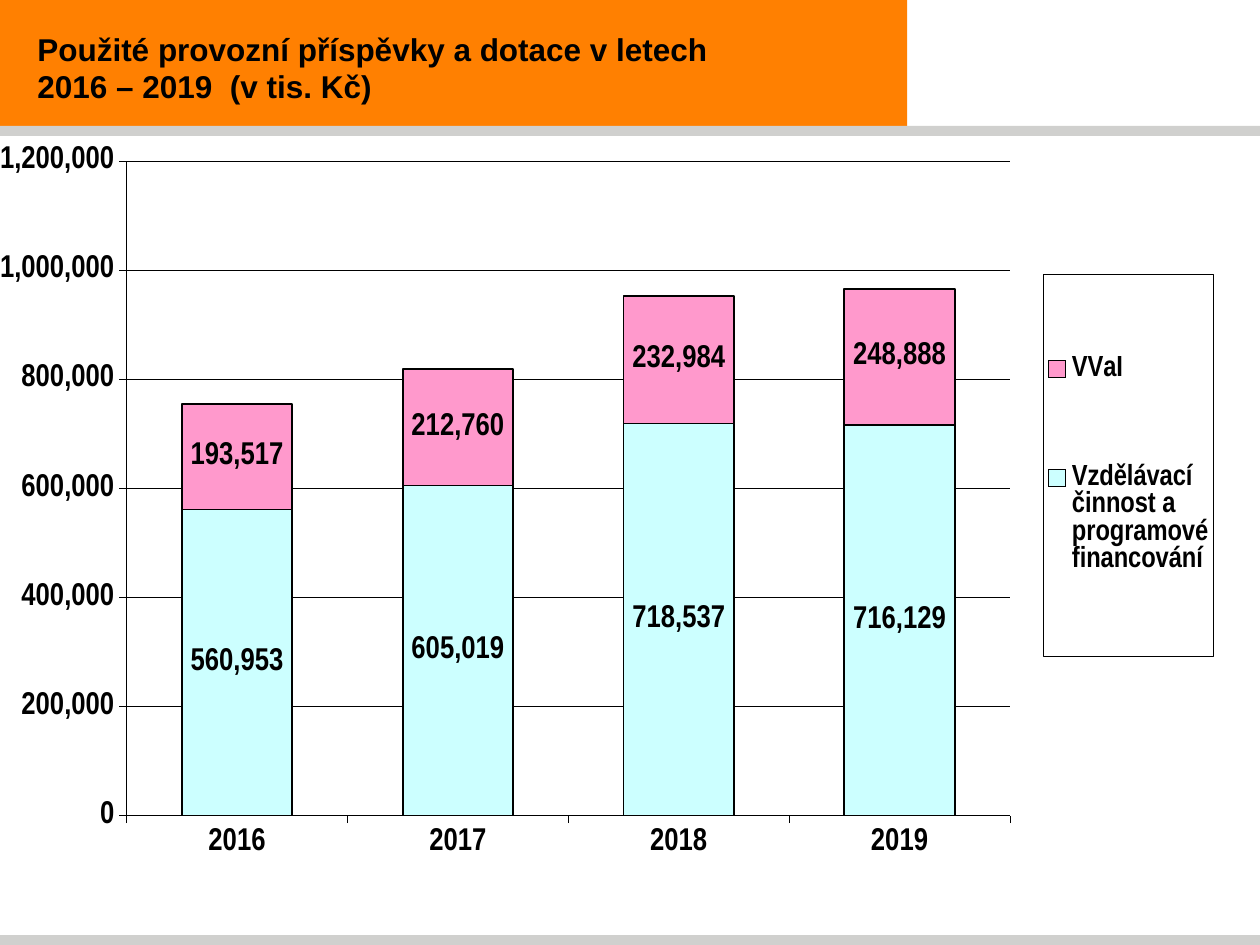
from lxml.etree import SubElement
from pptx import Presentation
from pptx.chart.data import CategoryChartData
from pptx.dml.color import RGBColor
from pptx.enum.chart import (XL_CHART_TYPE, XL_LEGEND_POSITION,
                             XL_TICK_LABEL_POSITION, XL_TICK_MARK)
from pptx.enum.shapes import MSO_SHAPE
from pptx.enum.text import MSO_ANCHOR, MSO_AUTO_SIZE, PP_ALIGN
from pptx.oxml import parse_xml
from pptx.oxml.ns import nsdecls, qn
from pptx.util import Cm, Pt

HUES = {"orange": "FF8001", "grey": "D0D0CE", "black": "000000",
        "aqua": "CCFFFF", "pink": "FF99CC"}
WIDE, HIGH = 25.4, 19.05
BAND, RULE = 18.29, 0.2
TITLE = "Použité provozní příspěvky a dotace v letech \v2016 – 2019  (v tis. Kč)"
YEARS = ["2016", "2017", "2018", "2019"]
SERIES = [
    ("Vzdělávací činnost a programové financování", "aqua",
     (560953, 605019, 718537, 716129)),
    ("VVaI", "pink", (193517, 212760, 232984, 248888)),
]


def hue(name):
    return RGBColor.from_string(HUES[name])


def style(font, face, size=18):
    for key, value in {"name": face, "size": Pt(size), "bold": True}.items():
        setattr(font, key, value)
    font.color.rgb = hue("black")


def stroke(line, width):
    line.color.rgb = hue("black")
    line.width = Pt(width)


def add_bar(slide, top, width, height, color):
    bar = slide.shapes.add_shape(MSO_SHAPE.RECTANGLE, 0, Cm(top),
                                 Cm(width), Cm(height))
    bar.shadow.inherit = False
    bar.fill.solid()
    bar.fill.fore_color.rgb = hue(color)
    bar.line.fill.background()


def set_title(slide):
    title = slide.shapes.title
    spot = {"left": 0, "top": Cm(0.18), "width": Cm(BAND), "height": Cm(2.36)}
    for key, value in spot.items():
        setattr(title, key, value)
    frame = title.text_frame
    look = {"text": TITLE, "word_wrap": True, "auto_size": MSO_AUTO_SIZE.NONE,
            "vertical_anchor": MSO_ANCHOR.MIDDLE}
    for key, value in look.items():
        setattr(frame, key, value)
    para = frame.paragraphs[0]
    para.alignment = PP_ALIGN.LEFT
    para.line_spacing = 1.0
    props = para._p.get_or_add_pPr()
    props.set("marL", str(Cm(0.5)))
    props.set("indent", "0")
    for run in para.runs:
        style(run.font, "Arial")
    # Bring the title in front of its band
    slide.shapes._spTree.append(title._element)


def make_layout(box, inner=False):
    layout = parse_xml(f"<c:layout {nsdecls('c')}/>")
    manual = SubElement(layout, qn("c:manualLayout"))
    parts = [("layoutTarget", "inner")] if inner else []
    parts += [("xMode", "edge"), ("yMode", "edge")]
    parts += zip("xywh", box)
    for tag, value in parts:
        SubElement(manual, qn(f"c:{tag}")).set("val", str(value))
    return layout


def format_axis(axis):
    style(axis.tick_labels.font, "Arial Narrow")
    stroke(axis.format.line, 0.25)
    axis.major_tick_mark = XL_TICK_MARK.OUTSIDE
    axis.minor_tick_mark = XL_TICK_MARK.NONE


def format_legend(chart):
    chart.has_legend = True
    legend = chart.legend
    legend.position = XL_LEGEND_POSITION.RIGHT
    legend.include_in_layout = False
    style(legend.font, "Arial Narrow", 16.6)
    node = legend._element
    for old in node.findall(qn("c:layout")):
        node.remove(old)
    node.find(qn("c:legendPos")).addnext(make_layout((0.85, 0.17, 0.14, 0.51)))
    # Thin frame around the legend
    frame = parse_xml(
        f'<c:spPr {nsdecls("c", "a")}><a:noFill/><a:ln w="3175"><a:solidFill>'
        f'<a:srgbClr val="{HUES["black"]}"/></a:solidFill></a:ln></c:spPr>')
    node.find(qn("c:txPr")).addprevious(frame)


def format_series(series, color):
    series.format.fill.solid()
    series.format.fill.fore_color.rgb = hue(color)
    stroke(series.format.line, 1)
    labels = series.data_labels
    look = {"show_value": True, "number_format": "#,##0",
            "number_format_is_linked": False}
    for key, value in look.items():
        setattr(labels, key, value)
    style(labels.font, "Arial Narrow")


def add_chart(slide):
    data = CategoryChartData(number_format="#,##0")
    data.categories = YEARS
    for name, _, values in SERIES:
        data.add_series(name, values)
    chart = slide.shapes.add_chart(
        XL_CHART_TYPE.COLUMN_STACKED, 0, Cm(2.95), Cm(24.71), Cm(15.11),
        data).chart
    chart.has_title = False
    style(chart.font, "Arial Narrow")

    # Axes and grid
    years, sums = chart.category_axis, chart.value_axis
    for axis in (years, sums):
        format_axis(axis)
    years.tick_label_position = XL_TICK_LABEL_POSITION.LOW
    sums.minimum_scale, sums.maximum_scale = 0, 1200000
    sums.major_unit = 200000
    sums.tick_labels.number_format = "#,##0"
    sums.tick_labels.number_format_is_linked = False
    stroke(sums.major_gridlines.format.line, 0.25)

    # Columns
    plot = chart.plots[0]
    for key, value in {"gap_width": 100, "overlap": 100,
                       "vary_by_categories": False}.items():
        setattr(plot, key, value)
    for series, (_, color, _) in zip(plot.series, SERIES):
        format_series(series, color)

    # Plot area and legend places
    area = chart._chartSpace.chart.plotArea
    for old in area.findall(qn("c:layout")):
        area.remove(old)
    area.insert(0, make_layout((0.098, 0.019, 0.725, 0.874), inner=True))
    format_legend(chart)


def main():
    deck = Presentation()
    deck.slide_width, deck.slide_height = Cm(WIDE), Cm(HIGH)
    slide = deck.slides.add_slide(deck.slide_layouts[5])
    # Header band and grey rules
    add_bar(slide, 0, BAND, 2.54, "orange")
    for top in (HIGH - RULE, 2.54):
        add_bar(slide, top, WIDE, RULE, "grey")
    add_chart(slide)
    set_title(slide)
    deck.save("out.pptx")


if __name__ == "__main__":
    main()
